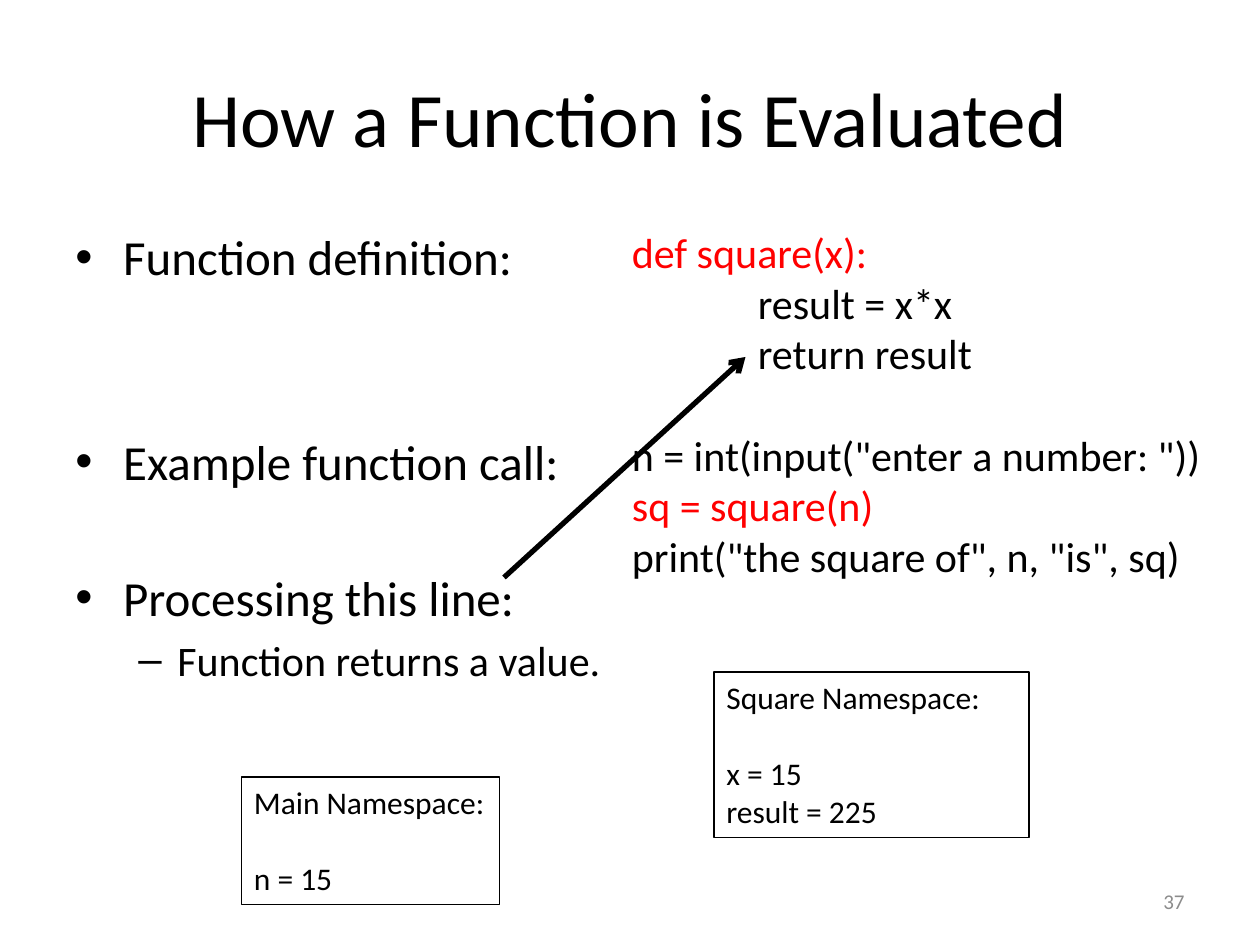
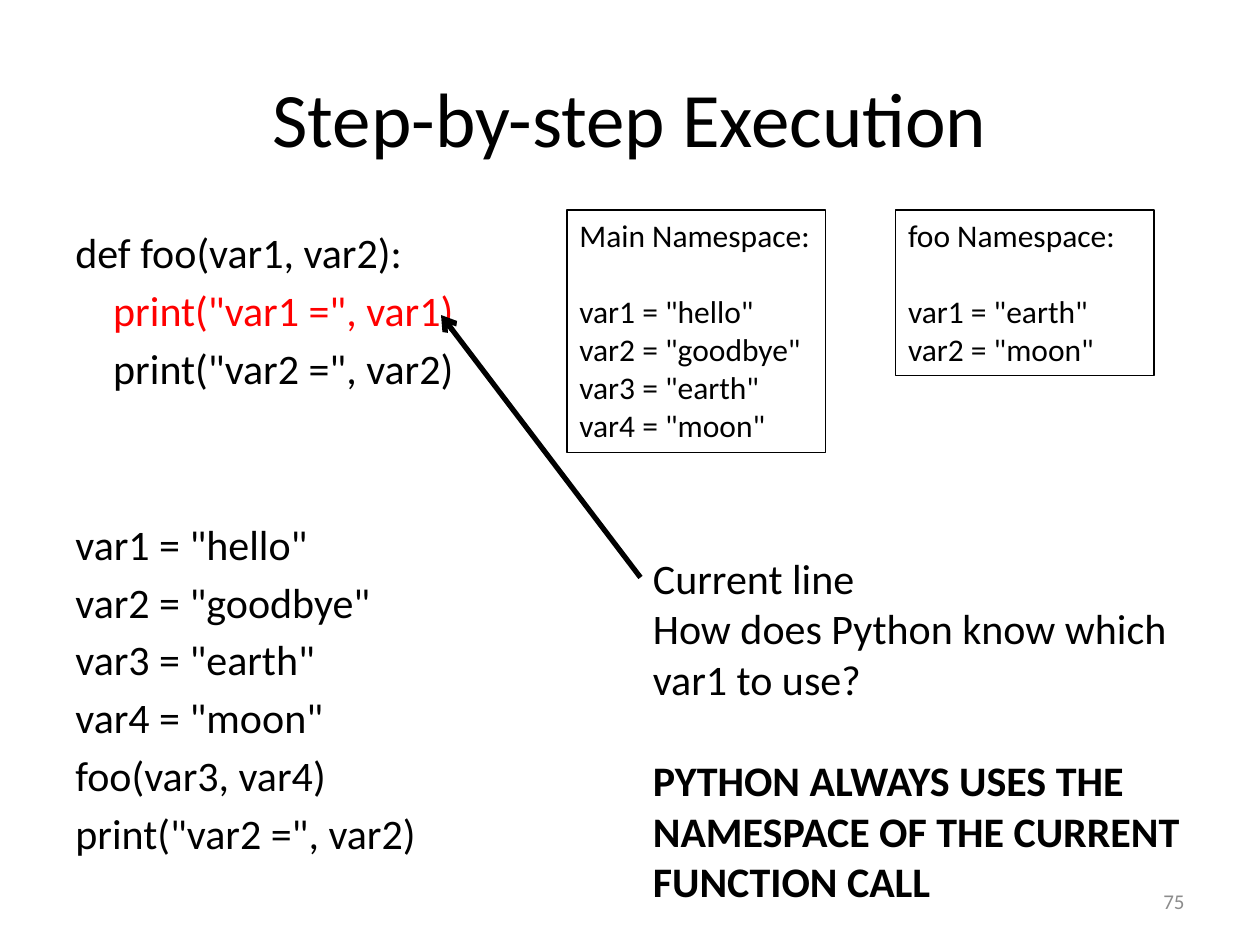
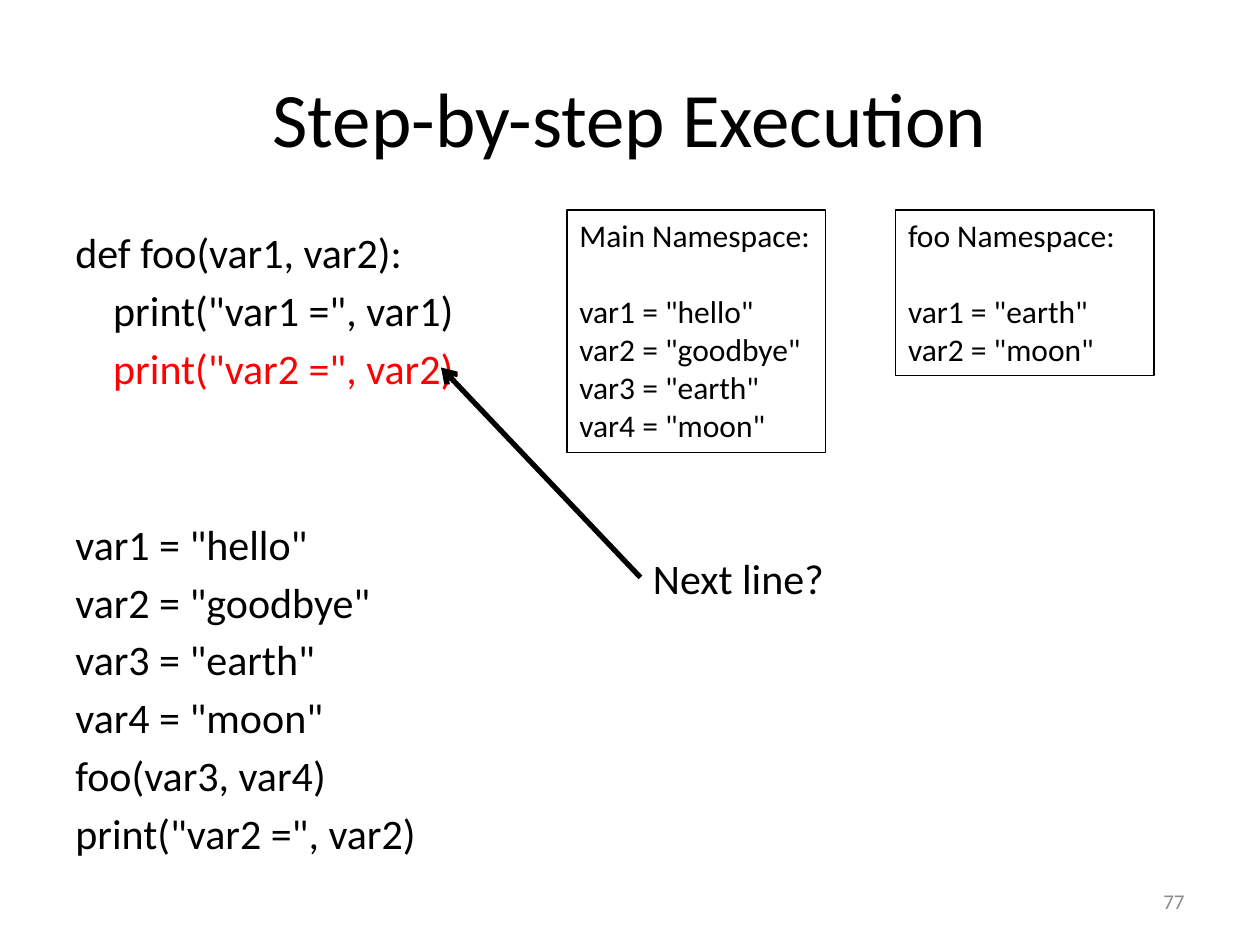
"""Build three slides that show how Python evaluates function calls."""
from dataclasses import dataclass

from lxml.etree import SubElement
from pptx import Presentation
from pptx.dml.color import RGBColor
from pptx.enum.shapes import MSO_CONNECTOR, MSO_SHAPE
from pptx.enum.text import MSO_ANCHOR, PP_ALIGN
from pptx.oxml.ns import qn
from pptx.util import Inches, Pt

BLACK = RGBColor(0, 0, 0)
RED = RGBColor(255, 0, 0)
GRAY = RGBColor(140, 140, 140)
FONT = "Calibri"
CELL = Inches(1) / 12
LINE_HEIGHT = 1.22
BODY_GAP = 0.18


@dataclass
class Line:
    """One paragraph, with the gap above it in multiples of its font size."""
    text: str
    size: int = 24
    color: RGBColor = BLACK
    gap: float = 0
    indent: float = 0
    mark: str = ""
    hang: float = 0
    bold: bool = False


def add_text(page, place, lines, align=PP_ALIGN.LEFT, anchor=MSO_ANCHOR.TOP, framed=False):
    """Write lines at a place given as column, row, columns and rows."""
    bounds = [round(length * CELL) for length in place]
    if framed:
        box = page.shapes.add_shape(MSO_SHAPE.RECTANGLE, *bounds)
        box.shadow.inherit = False
        box.fill.background()
        box.line.color.rgb = BLACK
        box.line.width = Pt(0.75)
    else:
        box = page.shapes.add_textbox(*bounds)
    frame = box.text_frame
    frame.word_wrap = True
    frame.vertical_anchor = anchor
    for number, line in enumerate(lines):
        para = frame.add_paragraph() if number else frame.paragraphs[0]
        para.text = line.text
        para.alignment = align
        para.space_before = Pt(round(line.gap * line.size, 1))
        properties = para._p.get_or_add_pPr()
        properties.set("marL", str(Inches(line.indent)))
        properties.set("indent", str(-Inches(line.hang)))
        if line.mark:
            SubElement(properties, qn("a:buFont"), typeface="Arial")
            SubElement(properties, qn("a:buChar"), char=line.mark)
        para.font.name = FONT
        para.font.size = Pt(line.size)
        para.font.bold = line.bold
        para.font.color.rgb = line.color
    return box


def add_arrow(page, start, end):
    """Draw a thick arrow between two grid points."""
    points = [round(length * CELL) for length in (*start, *end)]
    arrow = page.shapes.add_connector(MSO_CONNECTOR.STRAIGHT, *points)
    arrow.line.color.rgb = BLACK
    arrow.line.width = Pt(3)
    SubElement(arrow.line._get_or_add_ln(), qn("a:tailEnd"), type="arrow")
    SubElement(arrow._element.spPr, qn("a:effectLst"))
    return arrow


deck = Presentation()
deck.slide_width, deck.slide_height = Inches(10), Inches(7.5)

pages = []
for title, number in (
    ("How a Function is Evaluated", 37),
    ("Step-by-step Execution", 75),
    ("Step-by-step Execution", 77),
):
    page = deck.slides.add_slide(deck.slide_layouts[6])
    add_text(page, (6, 3.6, 108, 15), [Line(title, 44)], PP_ALIGN.CENTER, MSO_ANCHOR.MIDDLE)
    add_text(page, (86, 83.4, 28, 4.8), [Line(str(number), 12, GRAY)],
             PP_ALIGN.RIGHT, MSO_ANCHOR.MIDDLE)
    pages.append(page)
evaluation, *steps = pages

body_pitch = LINE_HEIGHT + BODY_GAP
points = [
    Line(text, 28, gap=gap, indent=0.38, mark="•", hang=0.38)
    for text, gap in (
        ("Function definition:", 0),
        ("Example function call:", BODY_GAP + 2 * body_pitch),
        ("Processing this line:", BODY_GAP + body_pitch),
    )
]
points.append(Line("Function returns a value.", gap=BODY_GAP, indent=0.81, mark="–", hang=0.31))
add_text(evaluation, (6, 21, 77, 44), points)
add_text(evaluation, (59, 21, 59, 38), [
    Line("def square(x):", color=RED),
    Line("result = x*x", indent=1),
    Line("return result", indent=1),
    Line('n = int(input("enter a number: "))', gap=LINE_HEIGHT),
    Line("sq = square(n)", color=RED),
    Line('print("the square of", n, "is", sq)'),
])
add_arrow(evaluation, (48, 55), (71, 34))

main_values = ['var1 = "hello"', 'var2 = "goodbye"', 'var3 = "earth"', 'var4 = "moon"']
foo_values = ['var1 = "earth"', 'var2 = "moon"']
namespaces = [
    (evaluation, "Main", 23, 74, 24.6, ["n = 15"]),
    (evaluation, "Square", 68, 64, 30, ["x = 15", "result = 225"]),
]
for page in steps:
    namespaces.append((page, "Main", 54, 20, 24.6, main_values))
    namespaces.append((page, "foo", 85.3, 20, 24.6, foo_values))
for page, name, column, row, columns, values in namespaces:
    lines = [Line(f"{name} Namespace:", 18)]
    lines += [Line(value, 18, gap=0 if index else LINE_HEIGHT)
              for index, value in enumerate(values)]
    rows = 1.2 + 3.65 * (len(values) + 2)
    add_text(page, (column, row, columns, rows), lines, framed=True)

program = ["def foo(var1, var2):", 'print("var1 =", var1)', 'print("var2 =", var2)',
           *main_values, "foo(var3, var4)", 'print("var2 =", var2)']
question = [
    Line("Current line"),
    Line("How does Python know which"),
    Line("var1 to use?"),
    Line("PYTHON ALWAYS USES THE", gap=LINE_HEIGHT, bold=True),
    Line("NAMESPACE OF THE CURRENT", bold=True),
    Line("FUNCTION CALL", bold=True),
]
for page, current, target_row, note, note_size in (
    (steps[0], 1, 30, question, (53, 35.2)),
    (steps[1], 2, 35, [Line("Next line?")], (18.8, 6)),
):
    code = []
    for index, text in enumerate(program):
        gap = BODY_GAP if index else 0
        if index == 3:
            gap += 2 * body_pitch
        code.append(Line(text, color=RED if index == current else BLACK, gap=gap,
                         indent=0.3 if index in (1, 2) else 0))
    add_text(page, (6, 21, 40, 59.4), code)
    note_box = add_text(page, (61, 52, *note_size), note)
    arrow = add_arrow(page, (61, 55), (42, target_row))
    if len(note) == 1:
        arrow.begin_connect(note_box, 1)

deck.save("out.pptx")
